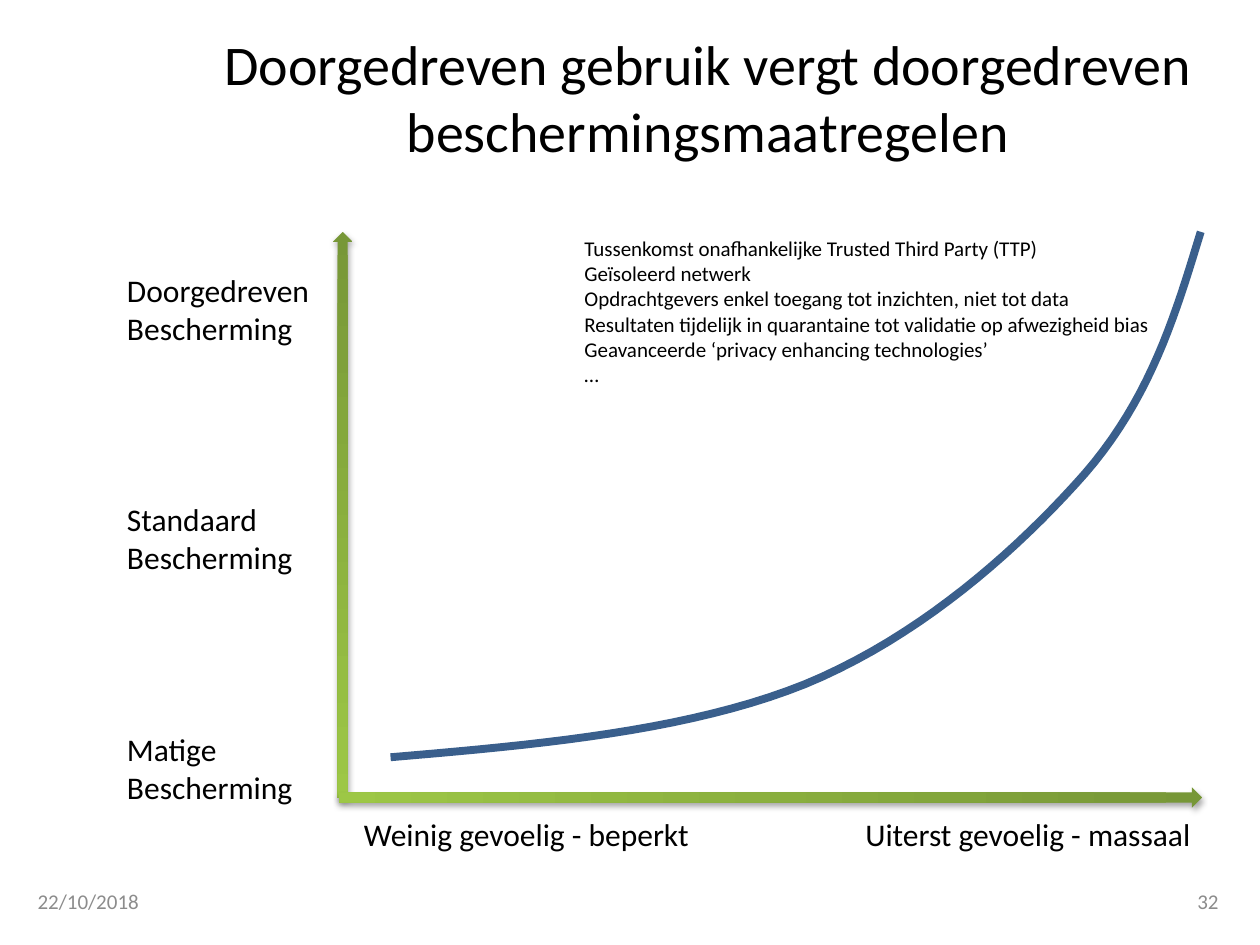
from lxml.etree import SubElement
from pptx import Presentation
from pptx.dml.color import RGBColor
from pptx.enum.shapes import MSO_SHAPE
from pptx.enum.text import MSO_ANCHOR, PP_ALIGN
from pptx.oxml.ns import qn
from pptx.util import Inches, Pt

BLACK = RGBColor(0, 0, 0)
GREY = RGBColor(0x8C, 0x8C, 0x8C)
DARK = RGBColor(0x77, 0x97, 0x37)
LIGHT = RGBColor(0x9D, 0xC7, 0x46)
BLUE = RGBColor(0x3A, 0x5F, 0x8C)

LEVELS = ["Doorgedreven", "Standaard", "Matige"]
NOTES = [
    "Tussenkomst onafhankelijke Trusted Third Party (TTP)",
    "Geïsoleerd netwerk \vOpdrachtgevers enkel toegang tot inzichten, niet tot data",
    "Resultaten tijdelijk in quarantaine tot validatie op afwezigheid bias",
    "Geavanceerde ‘privacy enhancing technologies’\v…",
]
# Cubic segments of the curve: two controls and an end each
START = (3.1, 6.01)
CURVE = [
    ((4.29, 5.91), (5.47, 5.8), (6.39, 5.43)),
    ((7.31, 5.05), (8.08, 4.36), (8.61, 3.76)),
    ((9.13, 3.16), (9.33, 2.5), (9.53, 1.84)),
]
STEPS = 20


def write(frame, lines, size=18, color=BLACK, align=PP_ALIGN.LEFT,
          anchor=MSO_ANCHOR.TOP, wrap=True, gap=0, every=1):
    """Fill a frame; a gap in points opens each group of `every` lines."""
    frame.word_wrap = wrap
    frame.vertical_anchor = anchor
    for i, line in enumerate(lines):
        par = frame.paragraphs[0] if i == 0 else frame.add_paragraph()
        par.text = line
        par.alignment = align
        if i and gap and i % every == 0:
            par.space_before = Pt(gap)
        for run in par.runs:
            run.font.name = "Calibri"
            run.font.size = Pt(size)
            run.font.color.rgb = color


def add_text(slide, box, lines, **style):
    frame = slide.shapes.add_textbox(*map(Inches, box)).text_frame
    write(frame, lines, **style)
    return frame


def add_title(slide, box):
    title = slide.shapes.title
    title.left, title.top, title.width, title.height = map(Inches, box)
    write(title.text_frame,
          ["Doorgedreven gebruik vergt doorgedreven beschermingsmaatregelen"],
          size=32, align=PP_ALIGN.CENTER, anchor=MSO_ANCHOR.MIDDLE)


def add_axis(slide, kind, box, angle):
    axis = slide.shapes.add_shape(kind, *map(Inches, box))
    axis.line.fill.background()
    axis.fill.gradient()
    axis.fill.gradient_angle = angle
    for stop, color in zip(axis.fill.gradient_stops, (DARK, LIGHT)):
        stop.color.rgb = color
    # Soft shadow below the arrow
    axis.shadow.inherit = False
    effects = axis.element.spPr.find(qn("a:effectLst"))
    shade = SubElement(effects, qn("a:outerShdw"), blurRad="40000",
                       dist="23000", dir="5400000", rotWithShape="0")
    tint = SubElement(shade, qn("a:srgbClr"), val="000000")
    SubElement(tint, qn("a:alpha"), val="35000")


def add_axes(slide, box):
    left, top, width, height = box
    thick = 0.16
    add_axis(slide, MSO_SHAPE.UP_ARROW, (left, top, thick, height), 270)
    add_axis(slide, MSO_SHAPE.RIGHT_ARROW,
             (left + 0.05, top + height - thick / 2, width, thick), 180)


def add_scale(slide, box):
    frame = add_text(slide, box,
                     ["Weinig gevoelig - beperkt\tUiterst gevoelig - massaal"])
    # Right tab holds the far end of the scale
    props = frame.paragraphs[0]._p.get_or_add_pPr()
    tabs = SubElement(props, qn("a:tabLst"))
    SubElement(tabs, qn("a:tab"), pos=str(Inches(6.56)), algn="r")


def add_levels(slide, box):
    lines = [line for level in LEVELS for line in (level, "Bescherming")]
    add_text(slide, box, lines, gap=88, every=2)


def bend(nodes, t):
    """Point at t on the cubic through four nodes."""
    s = 1 - t
    parts = (s ** 3, 3 * s * s * t, 3 * s * t * t, t ** 3)
    return tuple(Inches(sum(k * n[axis] for k, n in zip(parts, nodes)))
                 for axis in (0, 1))


def add_curve(slide):
    points, first = [], START
    for segment in CURVE:
        nodes = (first, *segment)
        points += [bend(nodes, i / STEPS) for i in range(1, STEPS + 1)]
        first = segment[-1]
    path = slide.shapes.build_freeform(*map(Inches, START))
    path.add_line_segments(points, close=False)
    curve = path.convert_to_shape()
    curve.shadow.inherit = False
    curve.fill.background()
    curve.line.color.rgb = BLUE
    curve.line.width = Pt(4.5)


def add_footer(slide, box):
    left, top, width, height = box
    half = 2.33
    style = dict(size=12, color=GREY, anchor=MSO_ANCHOR.MIDDLE)
    add_text(slide, (left, top, half, height), ["22/10/2018"], **style)
    add_text(slide, (left + width - half, top, half, height), ["32"],
             align=PP_ALIGN.RIGHT, **style)


def main():
    deck = Presentation()
    deck.slide_width, deck.slide_height = Inches(10), Inches(7.5)
    slide = deck.slides.add_slide(deck.slide_layouts[5])
    add_title(slide, (1.6, 0.3, 8.04, 0.93))
    add_footer(slide, (0.2, 6.95, 9.57, 0.4))
    add_axes(slide, (2.64, 1.84, 6.85, 4.49))
    add_scale(slide, (2.79, 6.42, 6.95, 0.4))
    add_levels(slide, (0.91, 2.1, 1.73, 4.64))
    add_text(slide, (4.54, 1.82, 4.79, 1.31), NOTES, size=12, wrap=False)
    add_curve(slide)
    deck.save("out.pptx")


if __name__ == "__main__":
    main()
